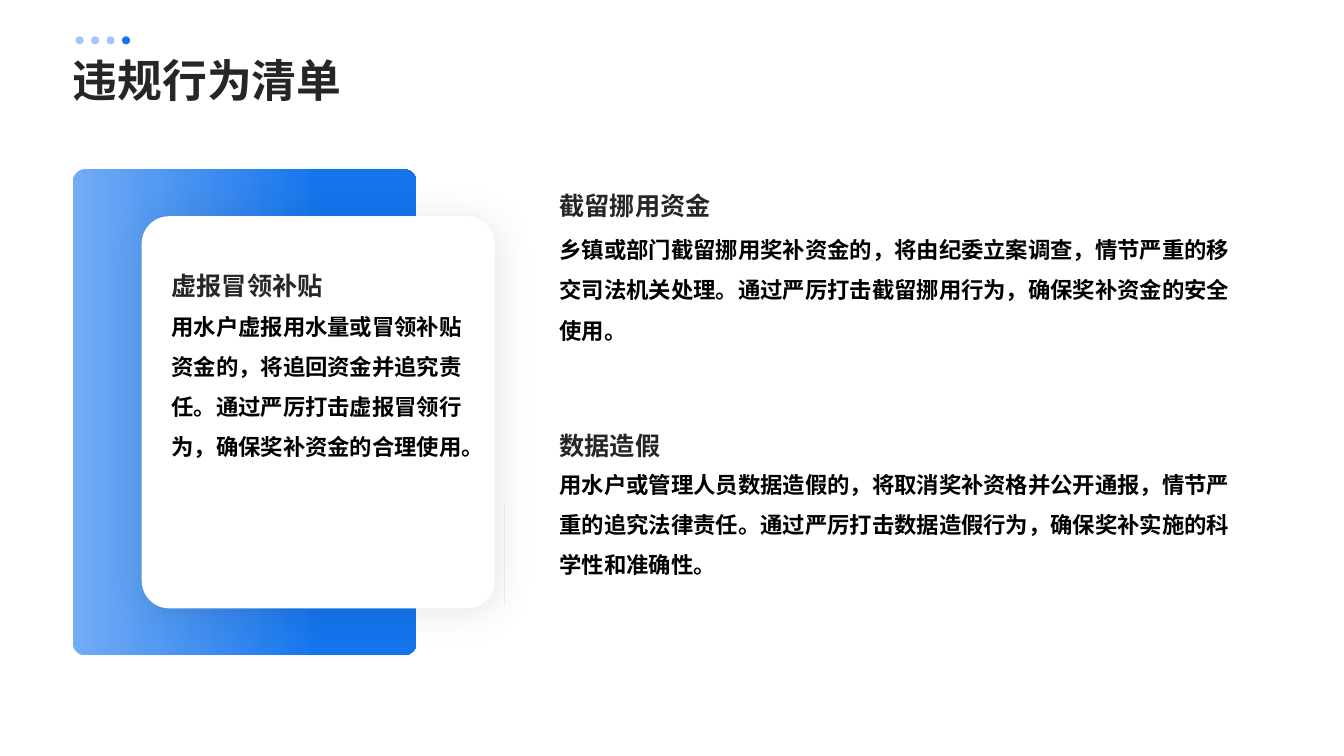
"""Build the slide listing violations in the water subsidy scheme."""
import math
from lxml import etree
from pptx import Presentation
from pptx.dml.color import RGBColor
from pptx.enum import shapes, text
from pptx.oxml import ns
from pptx.util import Inches, Pt

FONT = "Noto Sans CJK SC"
BLUE, INK, BLACK = "1474EC", "262626", "000000"


def paint(shape, color, alpha=100):
    """Give a shape a flat fill with no line or shadow."""
    shape.shadow.inherit = False
    shape.line.fill.background()
    shape.fill.solid()
    shape.fill.fore_color.rgb = RGBColor.from_string(color)
    if alpha < 100:
        tint = shape.fill._xPr.find(".//" + ns.qn("a:srgbClr"))
        etree.SubElement(tint, ns.qn("a:alpha"), val=str(alpha * 1000))


def write(box, place, words, size, color, anchor, spacing=1.5):
    """Place a text shape and set its words."""
    box.left, box.top, box.width, box.height = map(Inches, place)
    frame = box.text_frame
    settings = {"word_wrap": True, "auto_size": text.MSO_AUTO_SIZE.NONE,
                "vertical_anchor": anchor, "margin_left": 0, "margin_top": 0,
                "margin_right": 0, "margin_bottom": 0}
    for name, value in settings.items():
        setattr(frame, name, value)
    para = frame.paragraphs[0]
    para.alignment = text.PP_ALIGN.LEFT
    para.line_spacing = spacing
    span = para.add_run()
    span.text = words
    for name, value in {"size": Pt(size), "bold": True, "name": FONT}.items():
        setattr(span.font, name, value)
    span.font.color.rgb = RGBColor.from_string(color)
    etree.SubElement(span._r.get_or_add_rPr(), ns.qn("a:ea"), typeface=FONT)


deck = Presentation()
deck.slide_width, deck.slide_height = Inches(13.33), Inches(7.5)
page = deck.slides.add_slide(deck.slide_layouts[5])
TOP, MIDDLE, BOTTOM = (text.MSO_ANCHOR.TOP, text.MSO_ANCHOR.MIDDLE,
                       text.MSO_ANCHOR.BOTTOM)
write(page.shapes.title, (0.72, 0.51, 11.88, 0.51), "违规行为清单", 32, INK,
      MIDDLE, 1.1)

panel = page.shapes.add_shape(shapes.MSO_SHAPE.ROUNDED_RECTANGLE, Inches(0.72),
                              Inches(1.68), Inches(3.41), Inches(4.82))
panel.adjustments[0] = 0.036
paint(panel, BLUE)
panel.fill.gradient()
panel.fill.gradient_angle = 0
for stop, (position, color) in zip(panel.fill.gradient_stops,
                                   [(0, "72ACF4"), (0.73, BLUE)]):
    stop.position = position
    stop.color.rgb = RGBColor.from_string(color)

card = page.shapes.add_shape(shapes.MSO_SHAPE.ROUNDED_RECTANGLE, Inches(1.21),
                             Inches(2.34), Inches(3.89), Inches(3.5))
card.rotation = 90
card.adjustments[0] = 0.078
paint(card, "FFFFFF")
effects = card._element.spPr.find(ns.qn("a:effectLst"))
shadow = etree.SubElement(effects, ns.qn("a:outerShdw"), blurRad=str(Pt(28)),
                          dist=str(Pt(3)), dir=str(45 * 60000), algn="ctr",
                          rotWithShape="0")
shade = etree.SubElement(shadow, ns.qn("a:srgbClr"), val=BLACK)
etree.SubElement(shade, ns.qn("a:alpha"), val="10000")

center_x, center_y, reach, radius = 4.89, 5.62, 0.14, 0.04
outline = []
for quarter in range(4):
    turn = quarter * math.pi / 2
    arm = [(reach + radius * math.cos(angle), radius * math.sin(angle))
           for angle in (math.radians(step) for step in range(-90, 91, 15))]
    for along, across in arm + [(radius, radius)]:
        outline.append((
            center_x + along * math.cos(turn) - across * math.sin(turn),
            center_y + along * math.sin(turn) + across * math.cos(turn)))
builder = page.shapes.build_freeform(*outline[0], scale=Inches(1))
builder.add_line_segments(outline[1:], close=True)
paint(builder.convert_to_shape(), BLUE, 75)

entries = [
    ((1.7, 2.3, 2.91, 0.68), BOTTOM, "虚报冒领补贴", (1.7, 2.97, 2.91, 2.64),
     "用水户虚报用水量或冒领补贴资金的，将追回资金并追究责任。"
     "通过严厉打击虚报冒领行为，确保奖补资金的合理使用。"),
    ((5.55, 1.83, 6.75, 0.27), MIDDLE, "截留挪用资金", (5.55, 2.21, 6.75, 1.76),
     "乡镇或部门截留挪用奖补资金的，将由纪委立案调查，情节严重的移交司法机关处理。"
     "通过严厉打击截留挪用行为，确保奖补资金的安全使用。"),
    ((5.55, 4.21, 6.75, 0.27), MIDDLE, "数据造假", (5.55, 4.54, 6.75, 1.76),
     "用水户或管理人员数据造假的，将取消奖补资格并公开通报，情节严重的追究法律责任。"
     "通过严厉打击数据造假行为，确保奖补实施的科学性和准确性。"),
]
for heading_place, anchor, heading, body_place, body in entries:
    write(page.shapes.add_textbox(0, 0, 0, 0), heading_place, heading, 18, INK,
          anchor)
    write(page.shapes.add_textbox(0, 0, 0, 0), body_place, body, 16, BLACK, TOP)

for index, alpha in enumerate([40, 40, 40, 100]):
    dot = page.shapes.add_shape(shapes.MSO_SHAPE.OVAL,
                                Inches(0.75 + index * 0.46 / 3), Inches(0.36),
                                Inches(0.08), Inches(0.08))
    paint(dot, BLUE, alpha)

deck.save("out.pptx")
